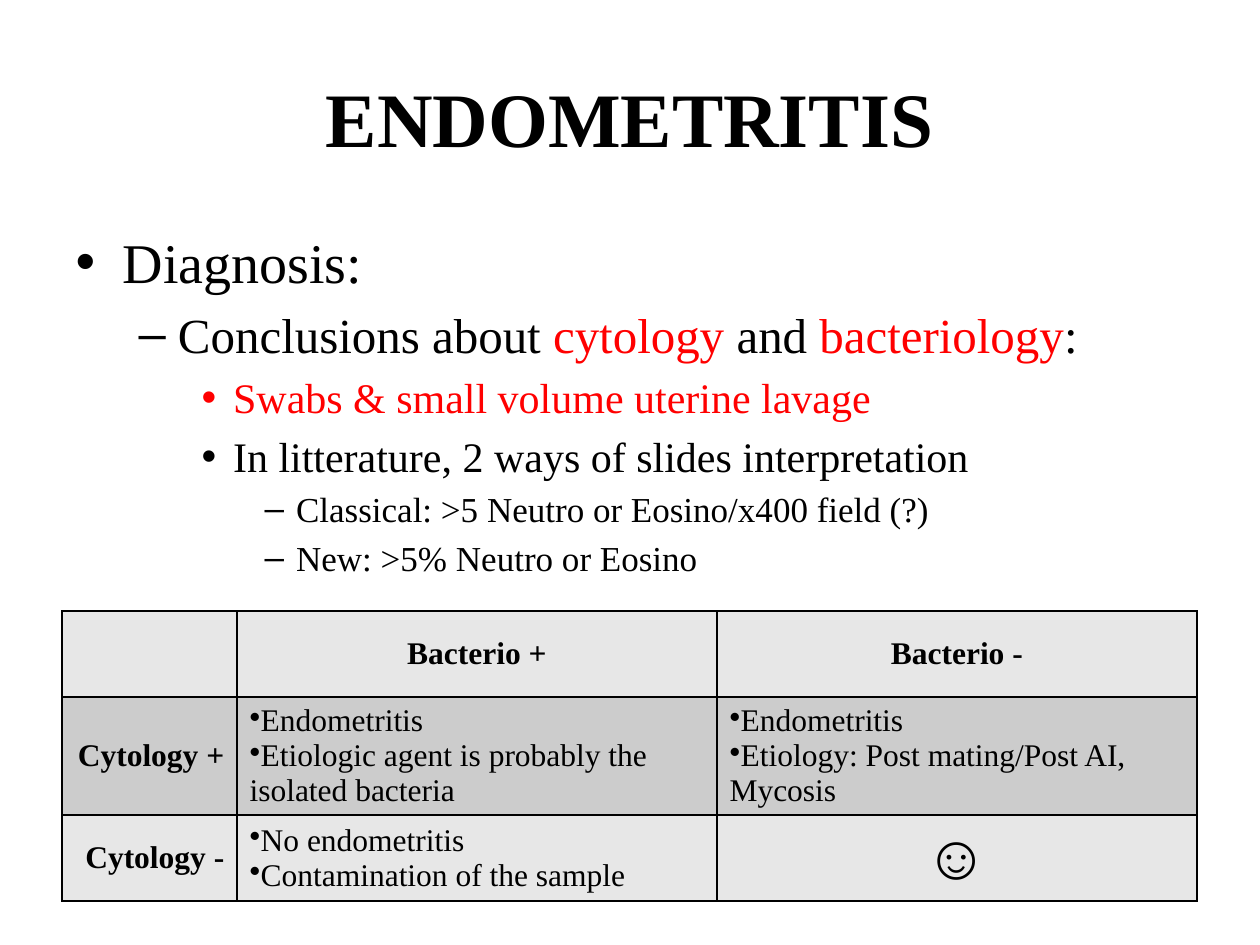
from lxml.etree import SubElement
from pptx import Presentation
from pptx.dml.color import RGBColor
from pptx.enum.text import MSO_ANCHOR, MSO_AUTO_SIZE, PP_ALIGN
from pptx.oxml.ns import qn
from pptx.util import Pt

PX_PER_INCH = 126
FONT = "Times New Roman"
BLACK, RED = "000000", "FF0000"
LIGHT, DARK = "E7E7E7", "CCCCCC"
LEVEL_SIZES = (32, 28, 24, 20)

BODY = [
    (0, [("Diagnosis:", BLACK)]),
    (1, [("Conclusions about ", BLACK), ("cytology", RED), (" and ", BLACK),
         ("bacteriology", RED), (":", BLACK)]),
    (2, [("Swabs & small volume uterine lavage", RED)]),
    (2, [("In litterature, 2 ways of slides interpretation", BLACK)]),
    (3, [("Classical: >5 Neutro or Eosino/x400 field (?)", BLACK)]),
    (3, [("New: >5% Neutro or Eosino", BLACK)]),
]

HEADER = dict(bold=True, align=PP_ALIGN.CENTER)
ROW_LABEL = dict(bold=True, align=PP_ALIGN.RIGHT)
FINDINGS = dict(bullet=True)
SMILEY = dict(size=36, align=PP_ALIGN.CENTER)

COLUMNS = (175, 480, 480)
ROWS = [
    (86, LIGHT, [([], {}), (["Bacterio +"], HEADER), (["Bacterio -"], HEADER)]),
    (118, DARK, [
        (["Cytology +"], ROW_LABEL),
        (["Endometritis", "Etiologic agent is probably the isolated bacteria"], FINDINGS),
        (["Endometritis", "Etiology: Post mating/Post AI, Mycosis"], FINDINGS)]),
    (86, LIGHT, [
        (["Cytology -"], ROW_LABEL),
        (["No endometritis", "Contamination of the sample"], FINDINGS),
        (["☺"], SMILEY)]),
]


def px(n):
    return round(n * 914400 / PX_PER_INCH)


def color(value):
    return RGBColor.from_string(value)


def place(sp, left, top, width, height):
    sp.left, sp.top, sp.width, sp.height = map(px, (left, top, width, height))


def add_text(p, text, size=18, fill=BLACK, bold=False, align=None, bullet=False):
    """Append one formatted run to a paragraph."""
    r = p.add_run()
    r.text = text
    r.font.name, r.font.size, r.font.bold = FONT, Pt(size), bold
    r.font.color.rgb = color(fill)
    if align is not None:
        p.alignment = align
    if bullet:
        SubElement(p._p.get_or_add_pPr(), qn("a:buChar"), char="•")


def paragraphs(tf, count):
    """Yield the first paragraph of the frame, then new ones."""
    for i in range(count):
        yield tf.paragraphs[0] if i == 0 else tf.add_paragraph()


def add_title(slide):
    sp = slide.shapes.title
    place(sp, 63, 38, 1134, 158)
    tf = sp.text_frame
    tf.vertical_anchor = MSO_ANCHOR.MIDDLE
    add_text(tf.paragraphs[0], "ENDOMETRITIS", size=44, bold=True, align=PP_ALIGN.CENTER)


def add_body(slide):
    sp = slide.placeholders[1]
    place(sp, 63, 221, 1134, 389)
    tf = sp.text_frame
    tf.auto_size = MSO_AUTO_SIZE.NONE
    for p, (level, runs) in zip(paragraphs(tf, len(BODY)), BODY):
        p.level = level
        for text, fill in runs:
            add_text(p, text, size=LEVEL_SIZES[level], fill=fill)


def add_borders(cell):
    tc_pr = cell._tc.get_or_add_tcPr()
    for side in ("lnL", "lnR", "lnT", "lnB"):
        ln = SubElement(tc_pr, qn(f"a:{side}"), w=str(Pt(1)))
        SubElement(SubElement(ln, qn("a:solidFill")), qn("a:srgbClr"), val=BLACK)


def fill_cell(cell, fill, lines, style):
    add_borders(cell)
    cell.fill.solid()
    cell.fill.fore_color.rgb = color(fill)
    cell.vertical_anchor = MSO_ANCHOR.MIDDLE
    for p, line in zip(paragraphs(cell.text_frame, len(lines)), lines):
        add_text(p, line, **style)


def add_findings_table(slide):
    height = sum(row[0] for row in ROWS)
    frame = slide.shapes.add_table(len(ROWS), len(COLUMNS), px(62), px(611),
                                   px(sum(COLUMNS)), px(height))
    table = frame.table
    table.first_row = table.horz_banding = False
    for column, width in zip(table.columns, COLUMNS):
        column.width = px(width)
    for r, (row_height, fill, cells) in enumerate(ROWS):
        table.rows[r].height = px(row_height)
        for c, (lines, style) in enumerate(cells):
            fill_cell(table.cell(r, c), fill, lines, style)


def main():
    prs = Presentation()
    prs.slide_width, prs.slide_height = px(1260), px(945)
    slide = prs.slides.add_slide(prs.slide_layouts[1])
    add_title(slide)
    add_body(slide)
    add_findings_table(slide)
    prs.save("out.pptx")


if __name__ == "__main__":
    main()
